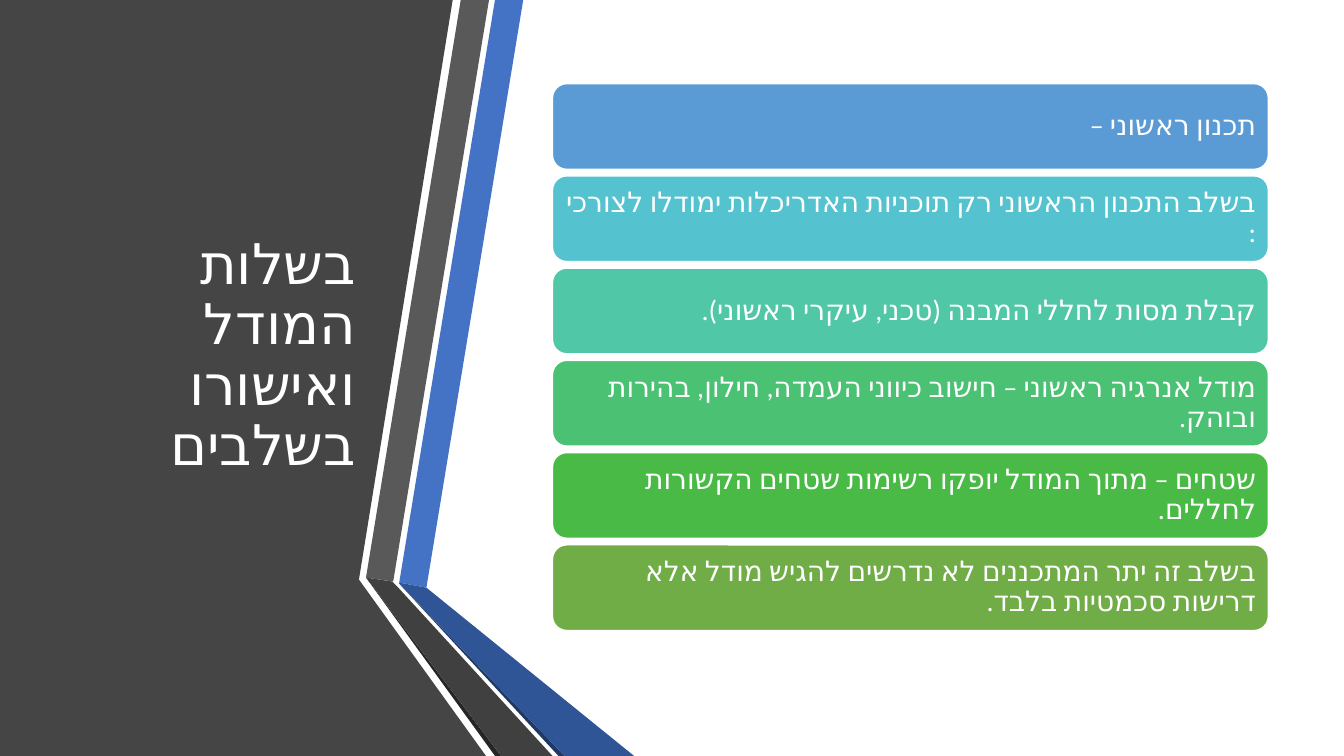
from pptx import Presentation
from pptx.dml.color import RGBColor
from pptx.enum.lang import MSO_LANGUAGE_ID
from pptx.enum.shapes import MSO_SHAPE
from pptx.enum.text import MSO_ANCHOR, PP_ALIGN
from pptx.oxml.ns import qn
from pptx.util import Inches, Pt

WIDTH, HEIGHT = 13.33, 7.5
FONT, WHITE = "Calibri", "FFFFFF"

# Stage list: left edge, first row, width, box height and row pitch in inches
LIST_LEFT, LIST_TOP, LIST_WIDTH = 5.48, 0.83, 7.1
BOX_HEIGHT, ROW_PITCH = 0.85, 0.915

TITLE = "בשלות המודל ואישורו בשלבים"
STAGES = [
    ("5B9BD5", "תכנון ראשוני –"),
    ("55C3CF", "בשלב התכנון הראשוני רק תוכניות האדריכלות ימודלו לצורכי :"),
    ("50C8A7", "קבלת מסות לחללי המבנה (טכני, עיקרי ראשוני)."),
    ("4BC174", "מודל אנרגיה ראשוני – חישוב כיווני העמדה, חילון, בהירות ובוהק."),
    ("4ABA46", "שטחים – מתוך המודל יופקו רשימות שטחים הקשורות לחללים."),
    ("70AD47", "בשלב זה יתר המתכננים לא נדרשים להגיש מודל אלא דרישות סכמטיות בלבד."),
]

# Dark panel and the folded ribbons beside it, from back to front
PANEL = ("454545", [(0, 0), (3.53, 0), (4.49, 0), (3.56, 5.75), (4.82, HEIGHT), (0, HEIGHT)])
RIBBONS = [
    ("4472C4", [(3.96, 5.78), (4.23, 5.83), (5.19, 0), (4.91, 0)]),
    ("595959", [(4.85, 0), (4.57, 0), (3.63, 5.73), (3.9, 5.77)]),
    ("262626", [(3.63, 5.73), (4.91, HEIGHT), (4.97, HEIGHT)]),
    ("203864", [(3.96, 5.79), (5.54, HEIGHT), (5.6, HEIGHT)]),
    ("2F5597", [(3.96, 5.79), (5.6, HEIGHT), (6.29, HEIGHT), (4.23, 5.83), (3.96, 5.78)]),
    ("404040", [(5.48, HEIGHT), (3.95, 5.83), (3.89, 5.77), (3.63, 5.73), (4.97, HEIGHT)]),
]


def color(hex_value):
    return RGBColor.from_string(hex_value)


def paint(shape, fill, line=None):
    shape.shadow.inherit = False
    shape.fill.solid()
    shape.fill.fore_color.rgb = color(fill)
    if line:
        shape.line.color.rgb = color(line)
        shape.line.width = Pt(1)
    else:
        shape.line.fill.background()


def write(box, text, size, margins=None, space_after=0):
    """Write one right-to-left paragraph, centred vertically in the box."""
    frame = box.text_frame
    frame.word_wrap = True
    frame.vertical_anchor = MSO_ANCHOR.MIDDLE
    if margins is not None:
        frame.margin_left = frame.margin_right = Inches(margins)
        frame.margin_top = frame.margin_bottom = Inches(margins)
    para = frame.paragraphs[0]
    para.alignment = PP_ALIGN.RIGHT
    para.line_spacing = 0.9
    para.space_after = Pt(space_after)
    para._p.get_or_add_pPr().set("rtl", "1")
    span = para.add_run()
    span.text = text
    span.font.size = Pt(size)
    span.font.name = FONT
    span.font.language_id = MSO_LANGUAGE_ID.HEBREW
    span.font.color.rgb = color(WHITE)
    # Hebrew takes the complex-script font
    properties = span._r.get_or_add_rPr()
    script_font = properties.makeelement(qn("a:cs"), {"typeface": FONT})
    properties.find(qn("a:latin")).addnext(script_font)


def add_polygon(page, fill, points):
    start, *others = [(Inches(x), Inches(y)) for x, y in points]
    builder = page.shapes.build_freeform(*start)
    builder.add_line_segments(others, close=True)
    paint(builder.convert_to_shape(), fill)


def add_title(page, text):
    box = page.shapes.add_textbox(Inches(0.59), Inches(0.75), Inches(3.04), Inches(5.58))
    write(box, text, 40)


def add_stage(page, row, fill, text):
    box = page.shapes.add_shape(
        MSO_SHAPE.ROUNDED_RECTANGLE,
        Inches(LIST_LEFT), Inches(LIST_TOP + row * ROW_PITCH),
        Inches(LIST_WIDTH), Inches(BOX_HEIGHT),
    )
    paint(box, fill, line=WHITE)
    write(box, text, 20, margins=0.08, space_after=7)


def main():
    deck = Presentation()
    deck.slide_width, deck.slide_height = Inches(WIDTH), Inches(HEIGHT)
    page = deck.slides.add_slide(deck.slide_layouts[6])

    # Left side
    for fill, points in [PANEL, *RIBBONS]:
        add_polygon(page, fill, points)
    add_title(page, TITLE)

    # Right side
    for row, (fill, text) in enumerate(STAGES):
        add_stage(page, row, fill, text)

    deck.save("out.pptx")


if __name__ == "__main__":
    main()
